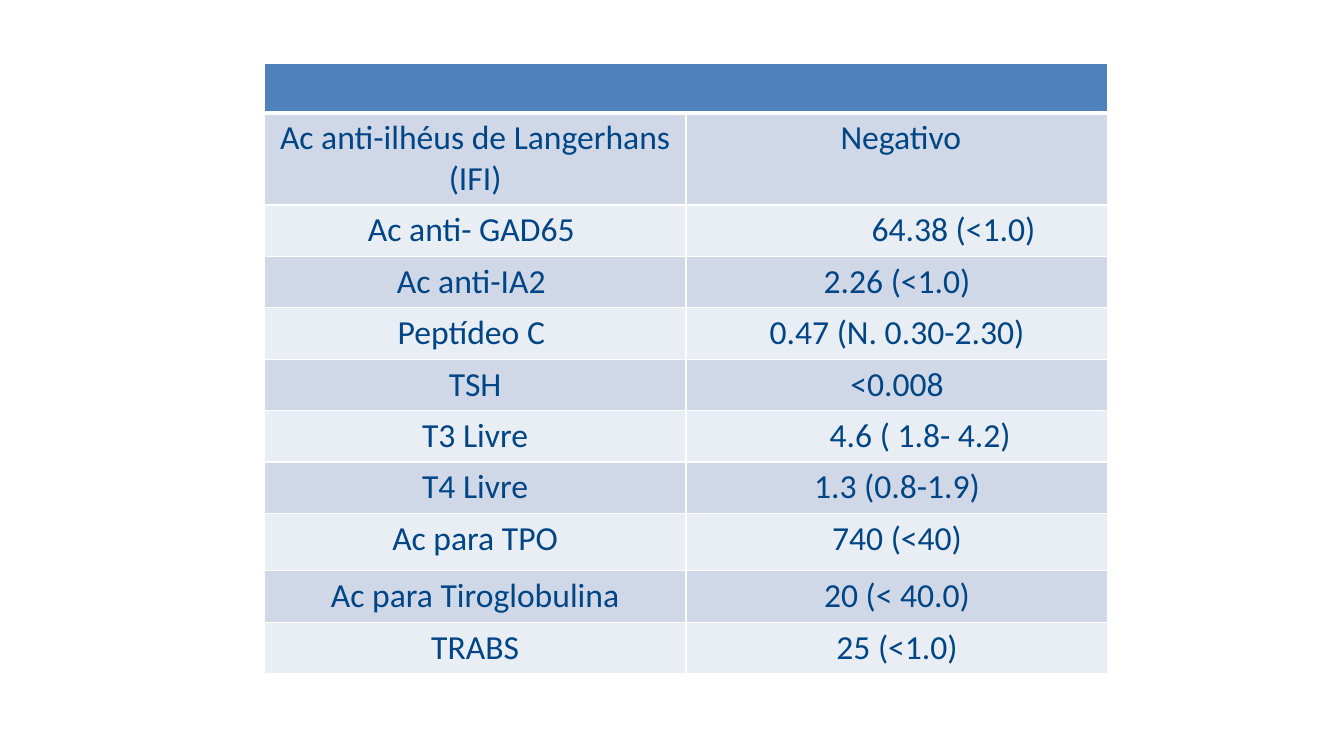
from lxml import etree
from pptx import Presentation
from pptx.dml.color import RGBColor
from pptx.enum.text import MSO_ANCHOR, PP_ALIGN
from pptx.oxml.ns import qn
from pptx.util import Inches, Pt

COLORS = {"header": "4F81BD", "odd": "D0D8E8", "even": "E9EDF4",
          "text": "004586", "border": "FFFFFF"}
FONT = {"name": "Calibri", "size": Pt(24), "bold": False}

RESULTS = [
    ("Ac anti-ilhéus de Langerhans (IFI)", " Negativo"),
    ("Ac anti- GAD65 ", "64.38 (<1.0)"),
    ("Ac anti-IA2 ", "2.26 (<1.0)"),
    ("Peptídeo C ", "0.47 (N. 0.30-2.30)"),
    ("TSH", "<0.008"),
    ("T3 Livre", "4.6 ( 1.8- 4.2)"),
    ("T4 Livre", "1.3 (0.8-1.9)"),
    ("Ac para TPO", "740 (<40)"),
    ("Ac para Tiroglobulina", "20 (< 40.0)"),
    ("TRABS", "25 (<1.0)"),
]
LINE_HEIGHT = 0.51
HEADER_HEIGHT = 0.49
TALL_ROWS = {1: 0.91, 8: 0.57}
# Row: left margin in inches and alignment of the values set off to the right
SHIFTED_VALUES = {2: (1.84, PP_ALIGN.LEFT), 6: (0.56, PP_ALIGN.CENTER)}


def set_borders(cell, widths):
    properties = cell._tc.get_or_add_tcPr()
    for side, points in widths.items():
        line = etree.SubElement(properties, qn(f"a:ln{side}"), w=str(Pt(points)))
        fill = etree.SubElement(line, qn("a:solidFill"))
        etree.SubElement(fill, qn("a:srgbClr"), val=COLORS["border"])


def style_cell(cell, row):
    """Give a cell its borders and band colour; the header has a thick rule below."""
    set_borders(cell, {"L": 1, "R": 1, "T": 3 if row == 1 else 1, "B": 3 if row == 0 else 1})
    band = "header" if row == 0 else ("even", "odd")[row % 2]
    cell.fill.solid()
    cell.fill.fore_color.rgb = RGBColor.from_string(COLORS[band])


def write_cell(cell, text, alignment):
    cell.vertical_anchor = MSO_ANCHOR.TOP
    para = cell.text_frame.paragraphs[0]
    para.alignment = alignment
    span = para.add_run()
    span.text = text
    for name, value in FONT.items():
        setattr(span.font, name, value)
    span.font.color.rgb = RGBColor.from_string(COLORS["text"])


def add_results_table(page, left, top, width):
    heights = [HEADER_HEIGHT] + [TALL_ROWS.get(row, LINE_HEIGHT)
                                 for row in range(1, len(RESULTS) + 1)]
    table = page.shapes.add_table(len(heights), 2, left, top, width,
                                  Inches(sum(heights))).table
    for column in table.columns:
        column.width = width // 2
    for row, height in enumerate(heights):
        table.rows[row].height = Inches(height)
        for column in range(2):
            style_cell(table.cell(row, column), row)
    table.cell(0, 0).merge(table.cell(0, 1))

    for row, (exam, value) in enumerate(RESULTS, start=1):
        write_cell(table.cell(row, 0), exam, PP_ALIGN.CENTER)
        margin, alignment = SHIFTED_VALUES.get(row, (0.1, PP_ALIGN.CENTER))
        value_cell = table.cell(row, 1)
        value_cell.margin_left = Inches(margin)
        write_cell(value_cell, value, alignment)


def main():
    deck = Presentation()
    deck.slide_width, deck.slide_height = Inches(13.33), Inches(7.5)
    page = deck.slides.add_slide(deck.slide_layouts[6])
    add_results_table(page, Inches(2.62), Inches(0.63), Inches(8.37))
    deck.save("out.pptx")


if __name__ == "__main__":
    main()
